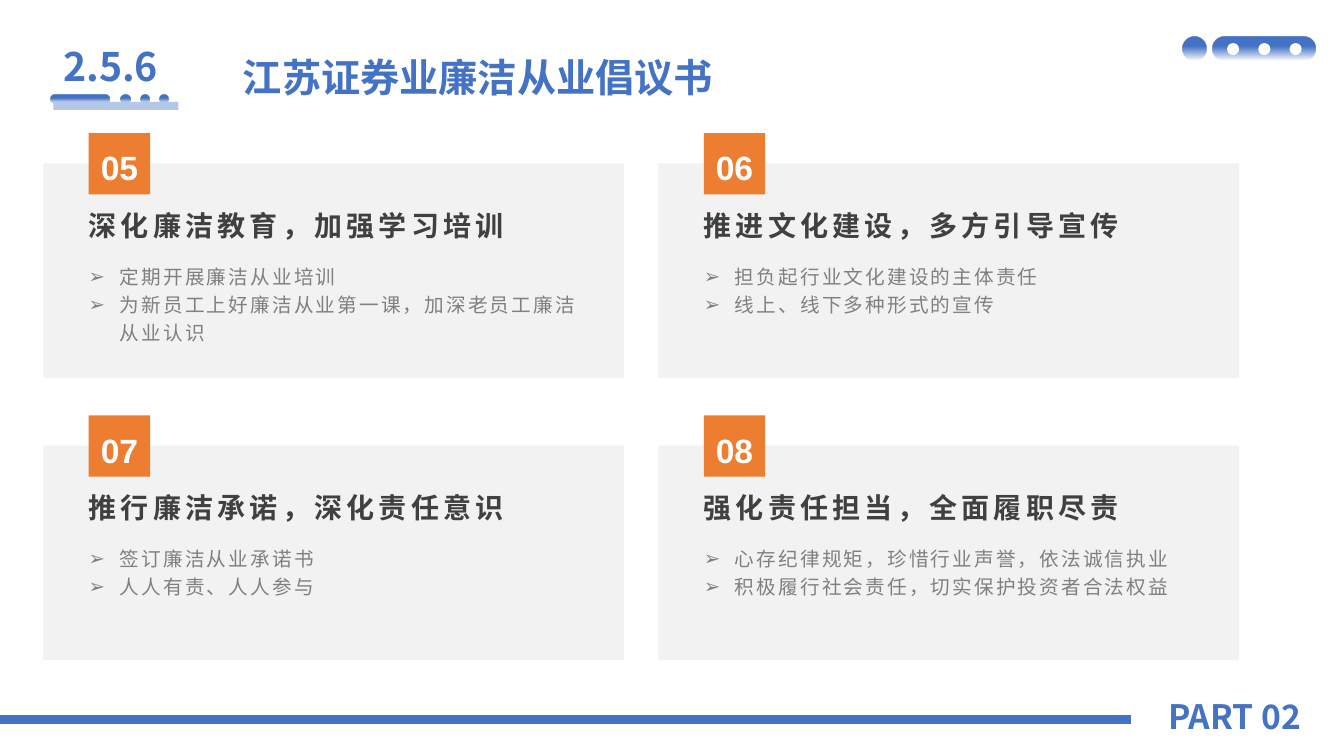
import pptx
import pptx.util
import pptx.dml.color
import pptx.enum.shapes
import pptx.enum.text
import pptx.oxml.ns
from lxml import etree

COLORS = {"blue": "4472C4", "pale_blue": "B4C7E7", "orange": "ED7D31", "card": "F2F2F2",
          "heading": "404040", "body": "808080", "white": "FFFFFF"}
CJK = "Noto Sans CJK SC"
LATIN = "Arial"
SHAPE = pptx.enum.shapes.MSO_SHAPE
ANCHOR = pptx.enum.text.MSO_ANCHOR
ALIGN = pptx.enum.text.PP_ALIGN
AUTO_SIZE = pptx.enum.text.MSO_AUTO_SIZE
Inches = pptx.util.Inches
qn = pptx.oxml.ns.qn

WIDTH, HEIGHT = 13.33, 7.5
CARD_LEFT, CARD_TOP, CARD_WIDTH, CARD_HEIGHT = 0.43, 1.62, 5.76, 2.13
COLUMN_STEP, ROW_STEP = 6.1, 2.8
CARDS = [
    ("05", "深化廉洁教育，加强学习培训",
     ["定期开展廉洁从业培训", "为新员工上好廉洁从业第一课，加深老员工廉洁从业认识"]),
    ("06", "推进文化建设，多方引导宣传",
     ["担负起行业文化建设的主体责任", "线上、线下多种形式的宣传"]),
    ("07", "推行廉洁承诺，深化责任意识",
     ["签订廉洁从业承诺书", "人人有责、人人参与"]),
    ("08", "强化责任担当，全面履职尽责",
     ["心存纪律规矩，珍惜行业声誉，依法诚信执业",
      "积极履行社会责任，切实保护投资者合法权益"]),
]


def rgb(name):
    return pptx.dml.color.RGBColor.from_string(COLORS[name])


def paint(shape, color):
    shape.shadow.inherit = False
    shape.line.fill.background()
    shape.fill.solid()
    shape.fill.fore_color.rgb = rgb(color)


def fade(shape):
    """Fill with blue that turns transparent towards the bottom."""
    paint(shape, "blue")
    shape.fill.gradient()
    shape.fill.gradient_angle = 270
    for stop, position in zip(shape.fill.gradient_stops, (0.4, 1)):
        stop.color.rgb = rgb("blue")
        stop.position = position
    last_stop = list(shape.element.spPr.iter(qn("a:gs")))[-1]
    etree.SubElement(last_stop[0], qn("a:alpha"), val="0")


def add_shape(page, kind, left, top, width, height):
    return page.shapes.add_shape(kind, *map(Inches, (left, top, width, height)))


def place(box, left, top, width, height):
    box.left, box.top, box.width, box.height = map(Inches, (left, top, width, height))


def style(para, size, color, latin=CJK, bold=True, spacing=0, lines=1.0):
    para.line_spacing = lines
    para.space_before = pptx.util.Pt(0)
    font = para.font
    font.size = pptx.util.Pt(size)
    font.bold = bold
    font.color.rgb = rgb(color)
    font.name = latin
    properties = para._p.pPr.find(qn("a:defRPr"))
    properties.set("spc", str(int(spacing * 100)))
    etree.SubElement(properties, qn("a:ea"), typeface=CJK)


def add_label(page, text, size, left, top, width, height):
    box = page.shapes.add_textbox(*map(Inches, (left, top, width, height)))
    box.text_frame.word_wrap = False
    box.text_frame.text = text
    style(box.text_frame.paragraphs[0], size, "blue")


def add_pill(page, left, top, width, height):
    pill = add_shape(page, SHAPE.ROUNDED_RECTANGLE, left, top, width, height)
    pill.adjustments[0] = 0.5
    fade(pill)


def add_corner_ornament(page, left, top, size):
    fade(add_shape(page, SHAPE.OVAL, left, top, size, size))
    add_pill(page, left + 0.3, top, 1.02, size)
    for index in range(3):
        dot = add_shape(page, SHAPE.OVAL, left + 0.44 + 0.31 * index, top + size * 0.28,
                        size / 2, size / 2)
        paint(dot, "white")


def add_header(page, left, top):
    add_pill(page, left, top + 0.57, 0.59, 0.09)
    for index in range(3):
        fade(add_shape(page, SHAPE.OVAL, left + 0.7 + 0.19 * index, top + 0.57, 0.09, 0.09))
    bar_left, bar_top = left + 0.03, top + 0.64
    paint(add_shape(page, SHAPE.RECTANGLE, bar_left, bar_top, 1.24, 0.08), "pale_blue")
    outline = page.shapes.build_freeform(bar_left, bar_top, scale=Inches(1))
    outline.add_line_segments([(bar_left + 0.3, bar_top), (bar_left + 0.28, bar_top + 0.08),
                               (bar_left, bar_top + 0.08)])
    paint(outline.convert_to_shape(), "blue")
    add_label(page, "2.5.6", 28, bar_left, top, 1.14, 0.57)

    title = page.shapes.title
    place(title, left + 1.81, top + 0.11, 6.3, 0.57)
    frame = title.text_frame
    frame.text = "江苏证券业廉洁从业倡议书"
    frame.auto_size = AUTO_SIZE.NONE
    frame.vertical_anchor = ANCHOR.TOP
    frame.paragraphs[0].alignment = ALIGN.LEFT
    style(frame.paragraphs[0], 28, "blue")


def fill_list(box, items):
    frame = box.text_frame
    frame.text = "\n".join(items)
    frame.auto_size = AUTO_SIZE.NONE
    frame.vertical_anchor = ANCHOR.TOP
    frame.margin_top = 0
    for para in frame.paragraphs:
        properties = para._p.get_or_add_pPr()
        properties.set("marL", str(Inches(0.31)))
        properties.set("indent", str(-Inches(0.31)))
        etree.SubElement(properties, qn("a:buChar"), char="➢")
        style(para, 14, "body", LATIN, bold=False, spacing=1.5, lines=1.2)


def add_card(page, body, left, top, number, heading, items):
    paint(add_shape(page, SHAPE.RECTANGLE, left, top, CARD_WIDTH, CARD_HEIGHT), "card")

    badge = add_shape(page, SHAPE.RECTANGLE, left + 0.45, top - 0.3, 0.61, 0.61)
    paint(badge, "orange")
    frame = badge.text_frame
    frame.margin_left = frame.margin_right = 0
    frame.margin_top = Inches(0.1)
    frame.vertical_anchor = ANCHOR.TOP
    frame.text = number
    frame.paragraphs[0].alignment = ALIGN.CENTER
    style(frame.paragraphs[0], 24, "white", LATIN, lines=1.1)

    box = page.shapes.add_textbox(*map(Inches, (left + 0.35, top + 0.36, 5.06, 0.42)))
    frame = box.text_frame
    frame.word_wrap = True
    frame.vertical_anchor = ANCHOR.BOTTOM
    frame.margin_bottom = 0
    frame.text = heading
    style(frame.paragraphs[0], 20, "heading", LATIN, spacing=3, lines=1.1)

    place(body, left + 0.35, top + 0.96, 5.06, 1.06)
    fill_list(body, items)
    page.shapes.element.append(body.element)  # lift the list above its card


def add_footer(page, top):
    rule = page.shapes.add_connector(pptx.enum.shapes.MSO_CONNECTOR.STRAIGHT,
                                     *map(Inches, (0, top, 11.22, top)))
    rule.line.color.rgb = rgb("blue")
    rule.line.width = pptx.util.Pt(6)
    etree.SubElement(rule.element.spPr, qn("a:effectLst"))
    add_label(page, "PART 02", 24, 11.49, top - 0.29, 1.53, 0.5)


def main():
    deck = pptx.Presentation()
    deck.slide_width, deck.slide_height = Inches(WIDTH), Inches(HEIGHT)
    page = deck.slides.add_slide(deck.slide_layouts.get_by_name("Comparison"))
    bodies = [box for box in page.placeholders if box.placeholder_format.idx > 0]
    add_corner_ornament(page, 11.73, 0.36, 0.24)
    add_header(page, 0.5, 0.37)
    for index, (body, card) in enumerate(zip(bodies, CARDS)):
        row, column = divmod(index, 2)
        add_card(page, body, CARD_LEFT + COLUMN_STEP * column,
                 CARD_TOP + ROW_STEP * row, *card)
    add_footer(page, 7.14)
    deck.save("out.pptx")


if __name__ == "__main__":
    main()
